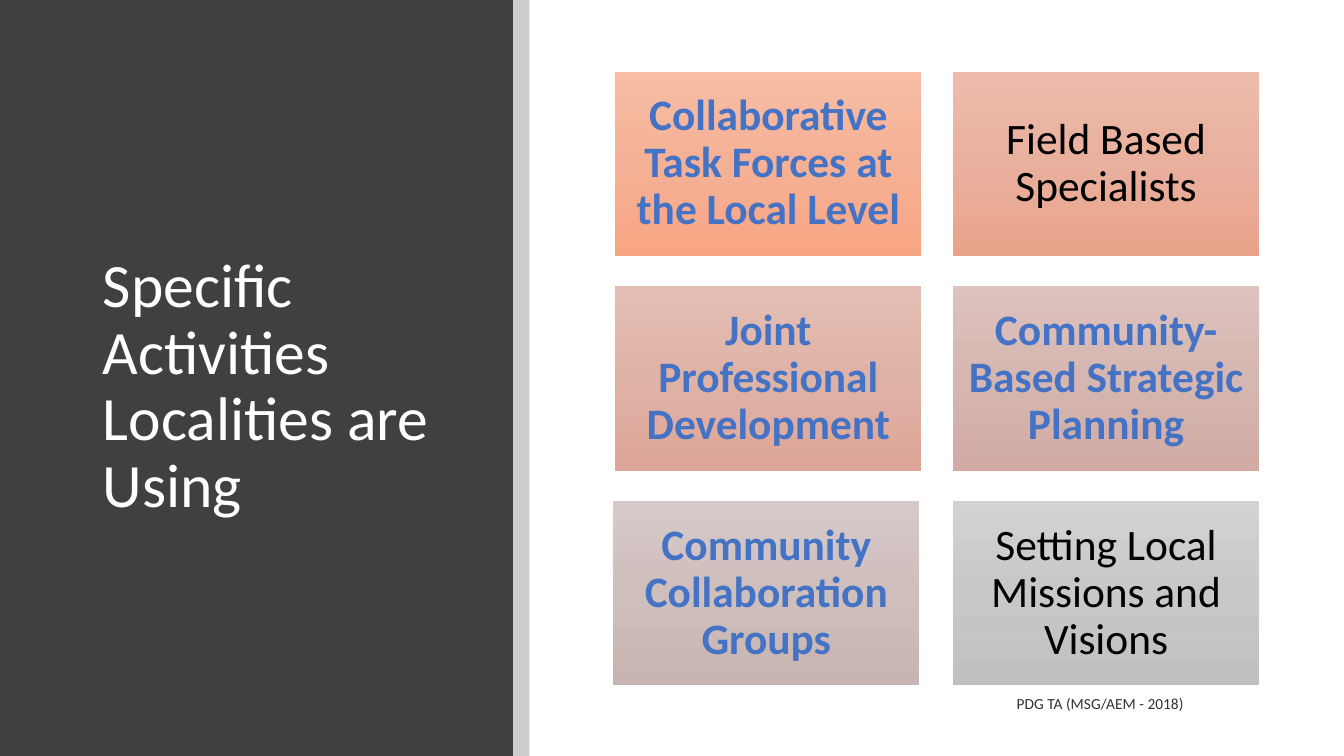
import copy

import pptx
import pptx.dml.color
import pptx.enum.shapes
import pptx.enum.text
import pptx.oxml.ns
import pptx.util

Inches = pptx.util.Inches
ALIGN = pptx.enum.text.PP_ALIGN

COLORS = {
    "panel": "404040",
    "stripe": "CCCCCC",
    "title": "FFFFFF",
    "highlight": "4472C4",
    "plain": "000000",
    "footer": "333333",
}

ACTIVITIES = [
    ("Collaborative Task Forces at the Local Level", "highlight", ("F7BDA5", "F5B196", "F8A582")),
    ("Field Based Specialists", "plain", ("EDBCAC", "E9B09D", "EAA38B")),
    ("Joint Professional Development", "highlight", ("E4BEB4", "DFB2A6", "DDA597")),
    ("Community-Based Strategic Planning", "highlight", ("DDC2BE", "D6B6B1", "D2ABA4")),
    ("Community Collaboration Groups", "highlight", ("D7C9C8", "CEBEBC", "C8B4B2")),
    ("Setting Local Missions and Visions", "plain", ("D2D2D2", "C8C8C8", "C0C0C0")),
]
COLUMNS = 2
TILE_WIDTH, TILE_HEIGHT = 3.04, 1.83
GRID_LEFT, GRID_TOP = 6.1, 0.71
COLUMN_STEP, ROW_STEP = 3.35, 2.13
LAST_ROW_LEFT = 6.08


def rgb(value):
    return pptx.dml.color.RGBColor.from_string(value)


def apply(target, values):
    for name, value in values.items():
        setattr(target, name, value)


def write(frame, text, size, color, align, bold=False, spacing=1.0, inset=None):
    apply(frame, {
        "text": text,
        "word_wrap": True,
        "auto_size": pptx.enum.text.MSO_AUTO_SIZE.NONE,
        "vertical_anchor": pptx.enum.text.MSO_ANCHOR.MIDDLE,
    })
    if inset is not None:
        sides = ("margin_left", "margin_top", "margin_right", "margin_bottom")
        apply(frame, dict.fromkeys(sides, Inches(inset)))
    paragraph = frame.paragraphs[0]
    apply(paragraph, {"alignment": align, "line_spacing": spacing})
    font = paragraph.runs[0].font
    apply(font, {"name": "Calibri", "size": pptx.util.Pt(size), "bold": bold})
    font.color.rgb = rgb(COLORS[color])


def add_block(slide, left, top, width, height):
    block = slide.shapes.add_shape(
        pptx.enum.shapes.MSO_SHAPE.RECTANGLE,
        Inches(left), Inches(top), Inches(width), Inches(height))
    block.shadow.inherit = False
    block.line.fill.background()
    return block


def add_band(slide, left, width, color):
    band = add_block(slide, left, 0, width, 7.5)
    band.fill.solid()
    band.fill.fore_color.rgb = rgb(COLORS[color])


def fill_gradient(block, shades):
    block.fill.gradient()
    block.fill.gradient_angle = 270
    stop_list = block._element.spPr.find(".//" + pptx.oxml.ns.qn("a:gsLst"))
    stop_list.insert(1, copy.deepcopy(stop_list[0]))
    for stop, shade, position in zip(block.fill.gradient_stops, shades, (0, 0.5, 1)):
        stop.position = position
        stop.color.rgb = rgb(shade)


def add_activity(slide, index, text, color, shades):
    row, column = divmod(index, COLUMNS)
    left = GRID_LEFT + column * COLUMN_STEP
    if row == 2 and column == 0:
        left = LAST_ROW_LEFT
    tile = add_block(slide, left, GRID_TOP + row * ROW_STEP, TILE_WIDTH, TILE_HEIGHT)
    fill_gradient(tile, shades)
    write(tile.text_frame, text, 31, color, ALIGN.CENTER,
          bold=color == "highlight", spacing=0.9, inset=0.13)


def place_title(slide, text):
    title = slide.shapes.title
    slide.shapes._spTree.append(title._element)
    apply(title, {"left": Inches(0.92), "top": Inches(0.89),
                  "width": Inches(3.65), "height": Inches(5.91)})
    write(title.text_frame, text, 44, "title", ALIGN.LEFT, spacing=0.9)


def add_footer(slide, text):
    footer = slide.shapes.add_textbox(Inches(5.97), Inches(6.78), Inches(5.87), Inches(0.4))
    write(footer.text_frame, text, 11, "footer", ALIGN.RIGHT)


def main():
    deck = pptx.Presentation()
    apply(deck, {"slide_width": Inches(13.33), "slide_height": Inches(7.5)})
    slide = deck.slides.add_slide(deck.slide_layouts[5])
    add_band(slide, 0, 5.09, "panel")
    add_band(slide, 5.09, 0.16, "stripe")
    place_title(slide, "Specific Activities Localities are Using")
    for index, activity in enumerate(ACTIVITIES):
        add_activity(slide, index, *activity)
    add_footer(slide, "PDG TA (MSG/AEM - 2018)")
    deck.save("out.pptx")


if __name__ == "__main__":
    main()
